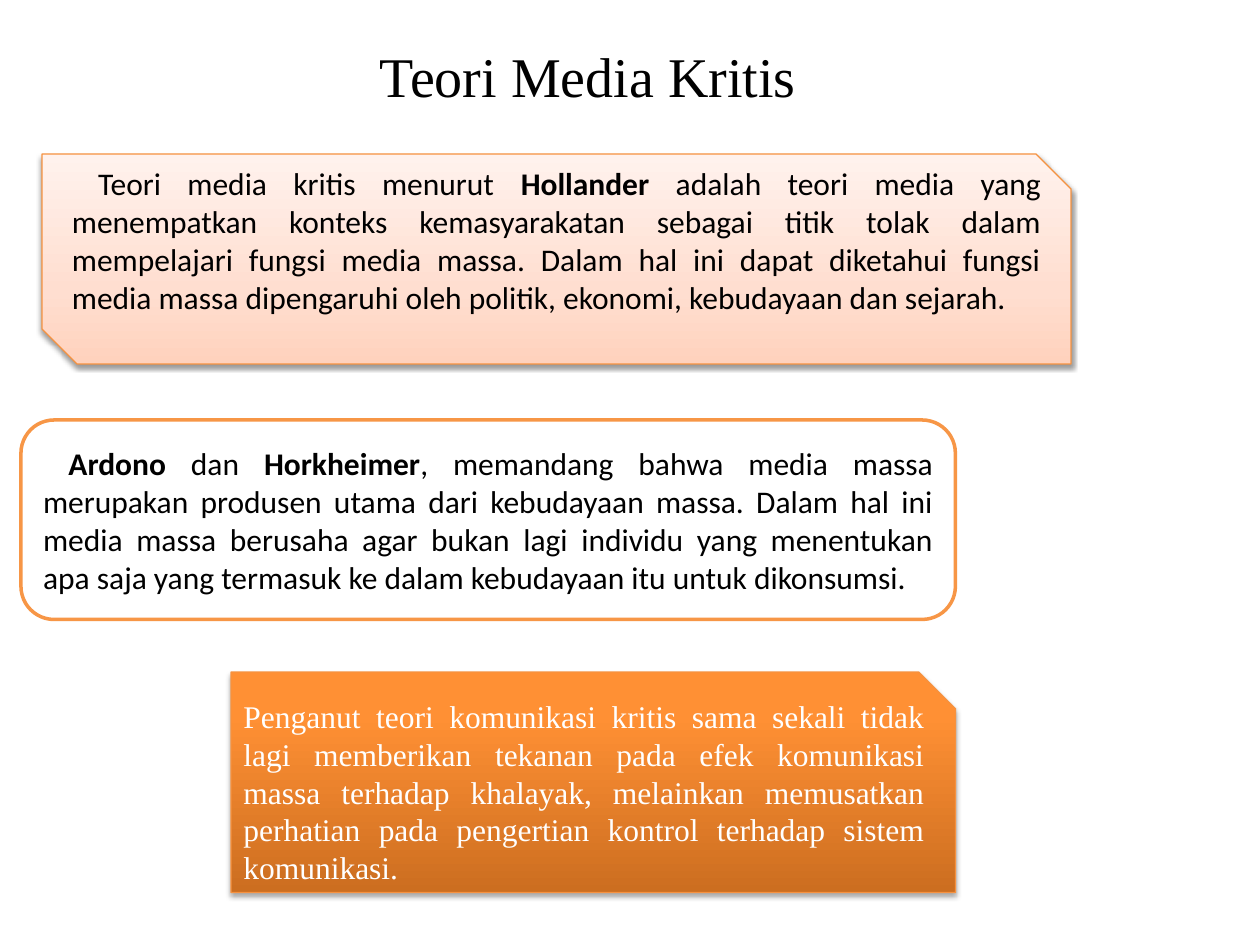
"""Build the slide on critical media theory."""
from copy import deepcopy

from lxml import etree
from pptx import Presentation
from pptx.dml.color import RGBColor
from pptx.enum.shapes import MSO_SHAPE
from pptx.enum.text import MSO_ANCHOR, PP_ALIGN
from pptx.oxml import parse_xml
from pptx.oxml.ns import nsdecls, qn
from pptx.util import Pt

SNIP_TWO = MSO_SHAPE.SNIP_2_DIAG_RECTANGLE
SNIP_ONE = MSO_SHAPE.SNIP_1_RECTANGLE
ROUND = MSO_SHAPE.ROUNDED_RECTANGLE
MIDDLE = MSO_ANCHOR.MIDDLE
CENTER = PP_ALIGN.CENTER
JUSTIFY = PP_ALIGN.JUSTIFY

BLACK = RGBColor(0x00, 0x00, 0x00)
WHITE = RGBColor(0xFF, 0xFF, 0xFF)
EDGE = RGBColor(0xF6, 0x92, 0x40)
ORANGE = RGBColor(0xF7, 0x96, 0x46)
PEACH = [(0, RGBColor(0xFF, 0xD2, 0xBD)),
         (0.35, RGBColor(0xFF, 0xDE, 0xD0)),
         (1, RGBColor(0xFF, 0xF2, 0xED))]
RUST = [(0, RGBColor(0xCC, 0x6E, 0x20)),
        (0.8, RGBColor(0xFF, 0x90, 0x34)),
        (1, RGBColor(0xFF, 0x91, 0x36))]
SERIF, SANS = "Times New Roman", "Calibri"


def set_font(para, face, size, color):
    para.font.name = face
    para.font.size = Pt(size)
    para.font.color.rgb = color


def add_shade(shape, stops, alpha, gap):
    fill = shape.fill
    fill.gradient()
    fill.gradient_angle = 90
    marks = shape._element.spPr.find(qn("a:gradFill")).find(qn("a:gsLst"))
    marks.append(deepcopy(marks[0]))
    for mark, (place, color) in zip(fill.gradient_stops, stops):
        mark.position = place
        mark.color.rgb = color
    effects = shape._element.spPr.find(qn("a:effectLst"))
    effects.append(parse_xml(
        f'<a:outerShdw {nsdecls("a")} blurRad="{Pt(3.1)}" dist="{Pt(gap)}" '
        f'dir="5400000" rotWithShape="0"><a:srgbClr val="000000">'
        f'<a:alpha val="{alpha * 1000}"/></a:srgbClr></a:outerShdw>'))


deck = Presentation()
deck.slide_width, deck.slide_height = Pt(720), Pt(540)
slide = deck.slides.add_slide(deck.slide_layouts[5])

title = slide.shapes.title
title.left, title.top, title.width, title.height = Pt(18), Pt(20), Pt(636), Pt(46)
title.text_frame.text = "Teori Media Kritis"
head = title.text_frame.paragraphs[0]
head.alignment = CENTER
set_font(head, SERIF, 32, BLACK)

boxes = [
    (SNIP_TWO, (24, 88, 588, 120), EDGE, 0.75, (PEACH, 38, 1.6), SANS, BLACK, 15, 25.2,
     [("Teori media kritis menurut ", False),
      ("Hollander", True),
      (" adalah teori media yang menempatkan konteks kemasyarakatan sebagai titik "
       "tolak dalam mempelajari fungsi media massa. Dalam hal ini dapat diketahui "
       "fungsi media massa dipengaruhi oleh politik, ekonomi, kebudayaan dan sejarah.",
       False)]),
    (ROUND, (12, 240, 534, 114), ORANGE, 2, None, SANS, BLACK, 14.5, 3.6,
     [("Ardono", True),
      (" dan ", False),
      ("Horkheimer", True),
      (", memandang bahwa media massa merupakan produsen utama dari kebudayaan massa. "
       "Dalam hal ini media massa berusaha agar bukan lagi individu yang menentukan "
       "apa saja yang termasuk ke dalam kebudayaan itu untuk dikonsumsi.", False)]),
    (SNIP_ONE, (132, 384, 414, 126), EDGE, 0.75, (RUST, 35, 1.8), SERIF, WHITE, 0, 3.6,
     [("Penganut teori komunikasi kritis sama sekali tidak lagi memberikan tekanan "
       "pada efek komunikasi massa terhadap khalayak, melainkan memusatkan perhatian "
       "pada pengertian kontrol terhadap sistem komunikasi.", False)]),
]

for kind, place, edge, weight, shade, face, color, indent, foot, parts in boxes:
    box = slide.shapes.add_shape(kind, *map(Pt, place))
    box.shadow.inherit = False
    box.line.color.rgb = edge
    box.line.width = Pt(weight)
    if shade:
        add_shade(box, *shade)
    else:
        box.fill.solid()
        box.fill.fore_color.rgb = WHITE
    frame = box.text_frame
    frame.word_wrap = True
    frame.vertical_anchor = MIDDLE
    frame.margin_bottom = Pt(foot)
    para = frame.paragraphs[0]
    para.alignment = JUSTIFY
    para._p.get_or_add_pPr().set("indent", str(Pt(indent)))
    set_font(para, face, 18, color)
    for words, bold in parts:
        run = para.add_run()
        run.text = words
        run.font.bold = bold

deck.save("out.pptx")
